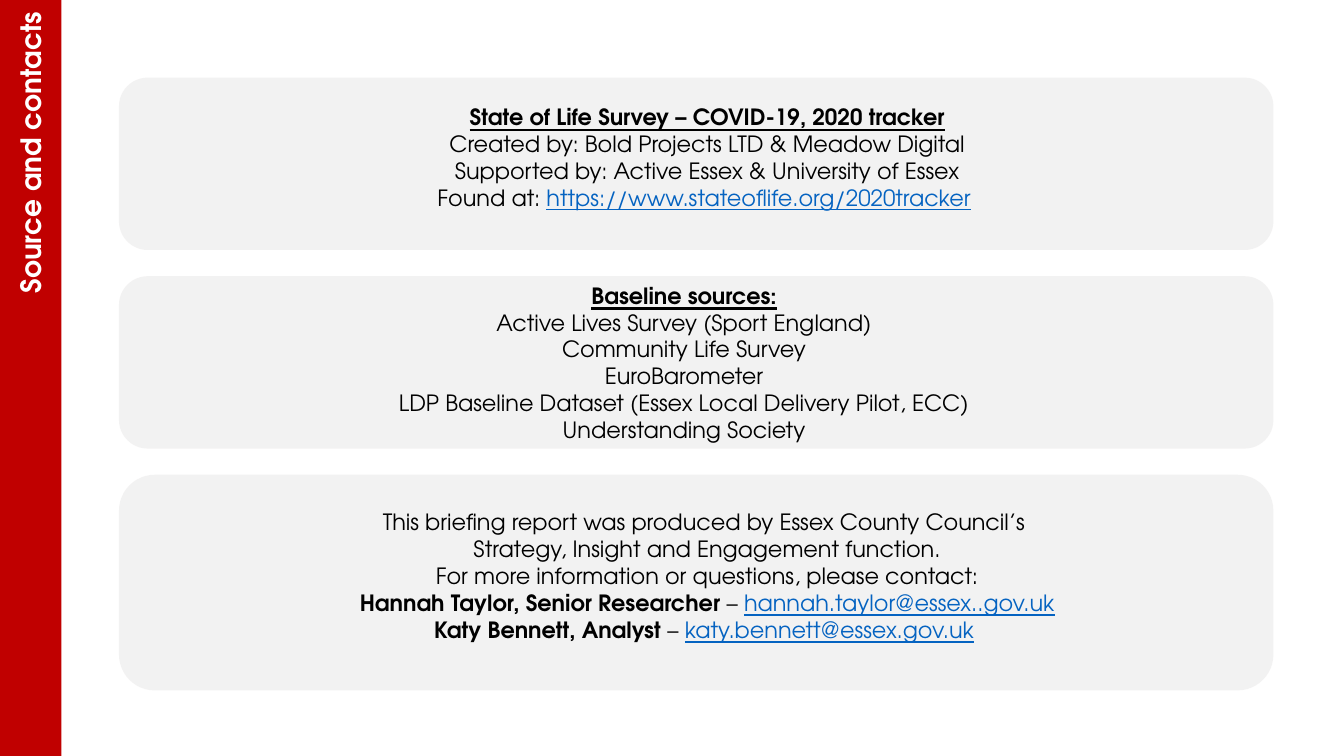
import pptx
import pptx.dml.color
import pptx.enum.shapes
import pptx.enum.text
import pptx.oxml.ns
import pptx.util
from collections import namedtuple
from dataclasses import dataclass
from lxml import etree

Box = namedtuple("Box", "left top width height")
Panel = namedtuple("Panel", "height text_size text_shift lines")
SHAPES = pptx.enum.shapes.MSO_SHAPE
ALIGN = pptx.enum.text.PP_ALIGN
ANCHOR = pptx.enum.text.MSO_ANCHOR


@dataclass(frozen=True)
class Theme:
    font: str = "TeX Gyre Adventor"
    band: str = "C00000"
    panel: str = "E7E6E6"
    panel_opacity: int = 50
    ink: str = "000000"
    link: str = "0563C1"
    title_ink: str = "FFFFFF"
    body_size: int = 16
    title_size: int = 20


THEME = Theme()
SLIDE = Box(0, 0, 13.33, 7.5)
BAND = Box(0, 0, 0.61, SLIDE.height)
PANEL_COLUMN = Box(1.18, 0.77, 11.45, 6.08)
PANEL_GAP = 0.26

# Run styles used in the panel text
PLAIN = {}
BOLD = {"bold": True}
HEADING = {"bold": True, "underline": True}
LINK = {"color": THEME.link, "underline": True}

# Each line is a list of (text, style) runs; sizes and shifts are in inches
PANELS = [
    Panel(1.71, (10.74, 1.18), (0.11, -0.07), [
        [("State of Life Survey – COVID-19, 2020 tracker", HEADING)],
        [("Created by: Bold Projects LTD & Meadow Digital", PLAIN)],
        [("Supported by: Active Essex & University of Essex", PLAIN)],
        [("Found at: ", PLAIN),
         ("https://www.stateoflife.org/2020tracker", LINK), (" ", PLAIN)],
    ]),
    Panel(1.71, (10.74, 1.71), (-0.12, 0), [
        [("Baseline sources:", HEADING)],
        [("Active Lives Survey (Sport England)", PLAIN)],
        [("Community Life Survey", PLAIN)],
        [("EuroBarometer", PLAIN)],
        [("LDP Baseline Dataset (Essex Local Delivery Pilot, ECC)", PLAIN)],
        [("Understanding Society", PLAIN)],
    ]),
    Panel(2.14, (7.84, 1.45), (0.11, -0.07), [
        [("This briefing report was produced by Essex County Council’s ", PLAIN)],
        [("Strategy, Insight and Engagement function.", PLAIN)],
        [("For more information or questions, please contact:", PLAIN)],
        [("Hannah Taylor, Senior Researcher ", BOLD), ("– ", PLAIN),
         ("hannah.taylor@essex..gov.uk", LINK)],
        [("Katy Bennett, Analyst ", BOLD), ("– ", PLAIN),
         ("katy.bennett@essex.gov.uk", LINK), (" ", PLAIN)],
    ]),
]


def inches(box):
    return [pptx.util.Inches(length) for length in box]


def centred(box, width, height, shift=(0, 0)):
    """Box of the given size on the centre of another, moved by shift."""
    return Box(box.left + (box.width - width) / 2 + shift[0],
               box.top + (box.height - height) / 2 + shift[1], width, height)


def add_text(paragraph, text, color=THEME.ink, size=THEME.body_size,
             bold=False, underline=False):
    run = paragraph.add_run()
    run.text = text
    run.font.name = THEME.font
    run.font.size = pptx.util.Pt(size)
    run.font.bold = bold
    run.font.underline = underline
    run.font.color.rgb = pptx.dml.color.RGBColor.from_string(color)


def add_block(slide, preset, box, color, opacity=100):
    block = slide.shapes.add_shape(preset, *inches(box))
    block.shadow.inherit = False
    block.line.fill.background()
    block.fill.solid()
    block.fill.fore_color.rgb = pptx.dml.color.RGBColor.from_string(color)
    if opacity < 100:
        tint = block.fill._xPr.find(".//" + pptx.oxml.ns.qn("a:srgbClr"))
        alpha = etree.SubElement(tint, pptx.oxml.ns.qn("a:alpha"))
        alpha.set("val", str(opacity * 1000))


def add_panel(slide, box, panel):
    add_block(slide, SHAPES.ROUNDED_RECTANGLE, box, THEME.panel, THEME.panel_opacity)
    text_box = centred(box, *panel.text_size, panel.text_shift)
    frame = slide.shapes.add_textbox(*inches(text_box)).text_frame
    frame.word_wrap = True
    frame.vertical_anchor = ANCHOR.MIDDLE
    for number, line in enumerate(panel.lines):
        paragraph = frame.add_paragraph() if number else frame.paragraphs[0]
        paragraph.alignment = ALIGN.CENTER
        for text, style in line:
            add_text(paragraph, text, **style)


def add_panels(slide, column):
    top = column.top
    for panel in PANELS:
        add_panel(slide, Box(column.left, top, column.width, panel.height), panel)
        top += panel.height + PANEL_GAP


def add_title_band(slide, band):
    add_block(slide, SHAPES.RECTANGLE, band, THEME.band)
    title = slide.shapes.title
    # The title reads upwards and ends at the top of the band
    length, thickness = 3.53, 0.44
    upright = Box(band.left, band.top + 0.02, band.width, length)
    title.left, title.top, title.width, title.height = inches(
        centred(upright, length, thickness))
    title.rotation = 270
    frame = title.text_frame
    frame.word_wrap = False
    frame.auto_size = pptx.enum.text.MSO_AUTO_SIZE.NONE
    frame.vertical_anchor = ANCHOR.MIDDLE
    heading = frame.paragraphs[0]
    heading.alignment = ALIGN.RIGHT
    heading.line_spacing = 1.0
    add_text(heading, "Source and contacts", color=THEME.title_ink,
             size=THEME.title_size, bold=True)
    # Bring the title in front of the band
    slide.shapes._spTree.append(title._element)


def main():
    deck = pptx.Presentation()
    deck.slide_width, deck.slide_height = inches((SLIDE.width, SLIDE.height))
    contacts = deck.slides.add_slide(deck.slide_layouts.get_by_name("Title Only"))
    add_panels(contacts, PANEL_COLUMN)
    add_title_band(contacts, BAND)
    deck.save("out.pptx")


if __name__ == "__main__":
    main()
